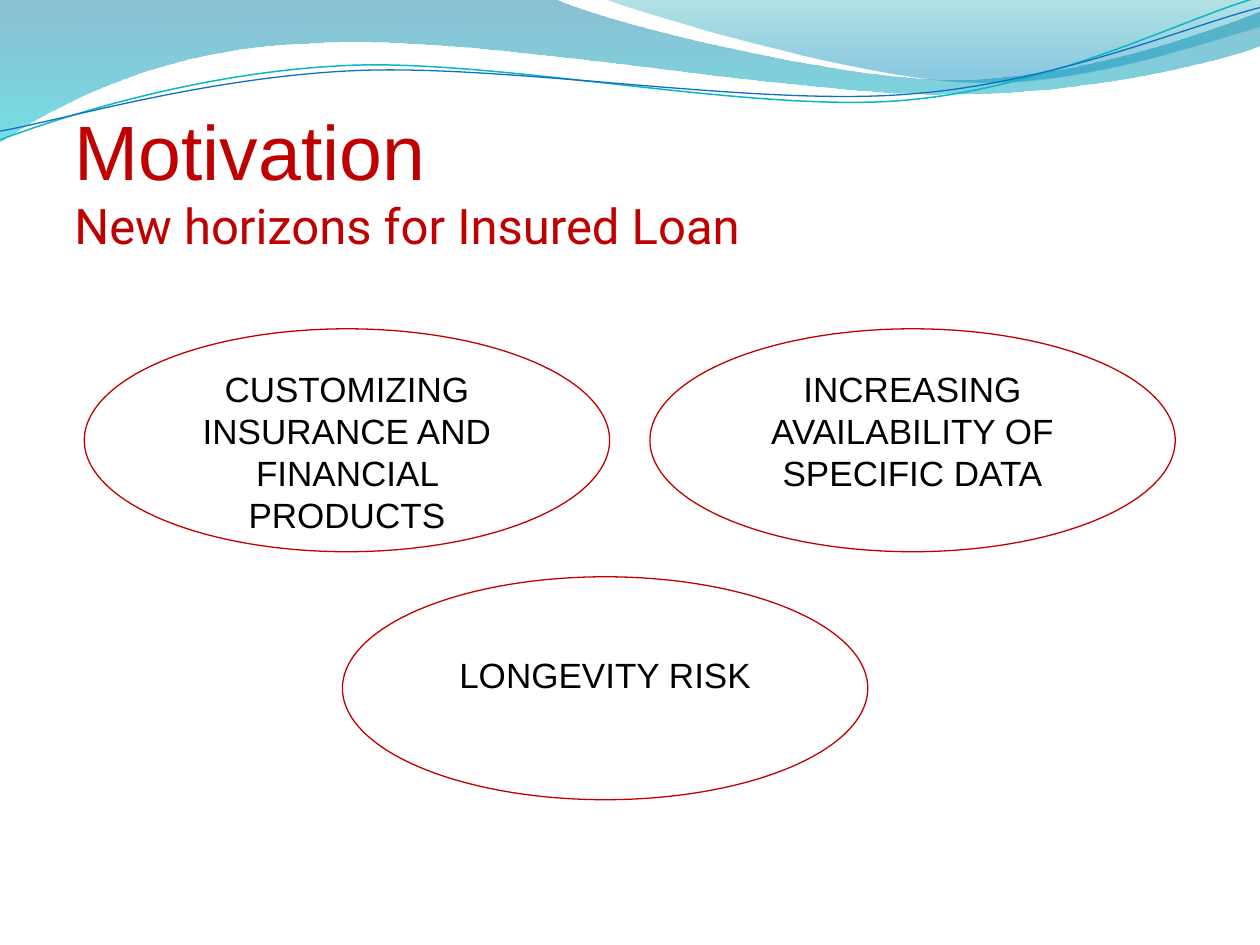
from pptx import Presentation
from pptx.dml.color import RGBColor
from pptx.enum.shapes import MSO_SHAPE
from pptx.enum.text import MSO_ANCHOR, MSO_AUTO_SIZE, PP_ALIGN
from pptx.oxml.ns import qn
from pptx.oxml.xmlchemy import OxmlElement
from pptx.util import Pt

RED = "C00000"
UNIT = 100
BAND = [(0, 0), (316.8, -0.7),
        (342.7, 12.2, 478.1, 45.4, 545.8, 45.4), (614.2, 45.4, 689.8, 18.7, 720, 6.5),
        (720.7, 25.9), (707.8, 31.7, 626.4, 54.7, 537.1, 54),
        (447.8, 54, 275, 20.2, 185, 24.5), (92.9, 25.9, 33.1, 59.8, -0.7, 81.4)]
CREST = [(344.9, -0.7), (366.5, 7.9, 491, 44.6, 553.7, 46.8),
         (616.3, 49.7, 691.9, 23, 720, 15.1), (720, 0)]
TEAL = [(0, 79.9), (34.6, 67, 113.8, 41, 199.4, 37.4),
        (284.4, 33.8, 427, 64.1, 513.4, 57.6), (599.8, 51.1, 675.4, 10.8, 718.6, -1.4)]
BLUE = [(0, 74.9), (33.8, 69.1, 118.1, 43.9, 203.8, 40.3),
        (290.2, 36.7, 429.8, 60.5, 516.2, 54), (601.9, 48.2, 677.5, 15.1, 720, 4.3)]


def color(text):
    """Turn a hex string into a colour."""
    return RGBColor.from_string(text)


class Deck:
    """Hold the style and the current slide."""

    def __init__(self):
        """Open a deck with one titled slide."""
        self.show = Presentation()
        self.show.slide_width, self.show.slide_height = Pt(720), Pt(540)
        self.slide = self.show.slides.add_slide(self.show.slide_layouts[5])
        self.base = self.show.slide_master.placeholders[0].element
        self.font, self.ink, self.size = "Arial", "000000", 20

    def style(self, run, size, font, ink):
        """Format one run."""
        run.font.size, run.font.name = Pt(size), font
        run.font.color.rgb = color(ink)

    def trace(self, route, close):
        """Draw an outline of lines and curves on the master."""
        dots = [(part[i] * UNIT, part[i + 1] * UNIT)
                for part in route for i in range(0, len(part), 2)]
        pen = self.slide.shapes.build_freeform(*dots[0], scale=Pt(1) / UNIT)
        pen.add_line_segments(dots[1:], close=close)
        shape = pen.convert_to_shape()
        shape.shadow.inherit = False
        legs = iter(shape.element.findall(".//" + qn("a:lnTo")))
        for part in route[1:]:
            leg = next(legs)
            if len(part) == 6:
                bend = OxmlElement("a:cubicBezTo")
                leg.addprevious(bend)
                for old in (leg, next(legs), next(legs)):
                    bend.append(old[0])
                    old.getparent().remove(old)
        tree = self.base.getparent()
        shape.element.nvSpPr.cNvPr.set("id", str(100 + len(tree)))
        self.base.addprevious(shape.element)
        return shape

    def wave(self, route, stops):
        """Draw a wave with a clear gradient from top to bottom."""
        shape = self.trace(route, True)
        shape.line.fill.background()
        shape.fill.gradient()
        shape.fill.gradient_angle = 270
        for stop, (place, shade, _) in zip(shape.fill.gradient_stops, stops):
            stop.position = place
            stop.color.rgb = color(shade)
        shades = shape.element.spPr.findall(".//" + qn("a:srgbClr"))
        for shade, (_, _, part) in zip(shades, stops):
            alpha = OxmlElement("a:alpha")
            alpha.set("val", str(part * 1000))
            shade.append(alpha)

    def line(self, route, ink, width):
        """Draw a thin curved line."""
        shape = self.trace(route, False)
        shape.fill.background()
        shape.line.color.rgb, shape.line.width = color(ink), Pt(width)

    def title(self, rows, box):
        """Fill the title, one format to each row."""
        title = self.slide.shapes.title
        title.left, title.top, title.width, title.height = map(Pt, box)
        frame = title.text_frame
        frame.text = "\v".join(row[0] for row in rows)
        frame.auto_size, frame.word_wrap = MSO_AUTO_SIZE.NONE, True
        frame.vertical_anchor = MSO_ANCHOR.BOTTOM
        frame.margin_left = frame.margin_right = frame.margin_bottom = 0
        frame.paragraphs[0].alignment = PP_ALIGN.LEFT
        for run, (_, size, font) in zip(frame.paragraphs[0].runs, rows):
            self.style(run, size, font, RED)

    def oval(self, text, left, top, drop=3.6):
        """Draw a red ring with text set down from its top."""
        shape = self.slide.shapes.add_shape(
            MSO_SHAPE.OVAL, Pt(left), Pt(top), Pt(300.2), Pt(127.4))
        shape.shadow.inherit = False
        shape.fill.background()
        shape.line.color.rgb, shape.line.width = color(RED), Pt(0.75)
        frame = shape.text_frame
        frame.text, frame.word_wrap = text, True
        frame.vertical_anchor, frame.margin_top = MSO_ANCHOR.TOP, Pt(drop)
        frame.paragraphs[0].alignment = PP_ALIGN.CENTER
        self.style(frame.paragraphs[0].runs[0], self.size, self.font, self.ink)


def main():
    """Build and save the slide."""
    deck = Deck()
    deck.wave(BAND, [(0, "0074A1", 45), (1, "00C6CF", 55)])
    deck.wave(CREST, [(0, "00A1A9", 30), (0.8, "008BBF", 45)])
    deck.line(TEAL, "0AB8BF", 0.85)
    deck.line(BLUE, "0F6FC6", 0.75)
    deck.title([("Motivation", 44, "Arial"),
                ("New horizons for Insured Loan", 28, "Roboto")],
               (42.5, 66.2, 654.5, 79.2))
    deck.oval("CUSTOMIZING INSURANCE AND FINANCIAL PRODUCTS", 48.2, 187.9)
    deck.oval("INCREASING AVAILABILITY OF SPECIFIC DATA", 371.4, 187.9)
    deck.oval("LONGEVITY RISK", 195.7, 329.6, 25)
    deck.show.save("out.pptx")


if __name__ == "__main__":
    main()
